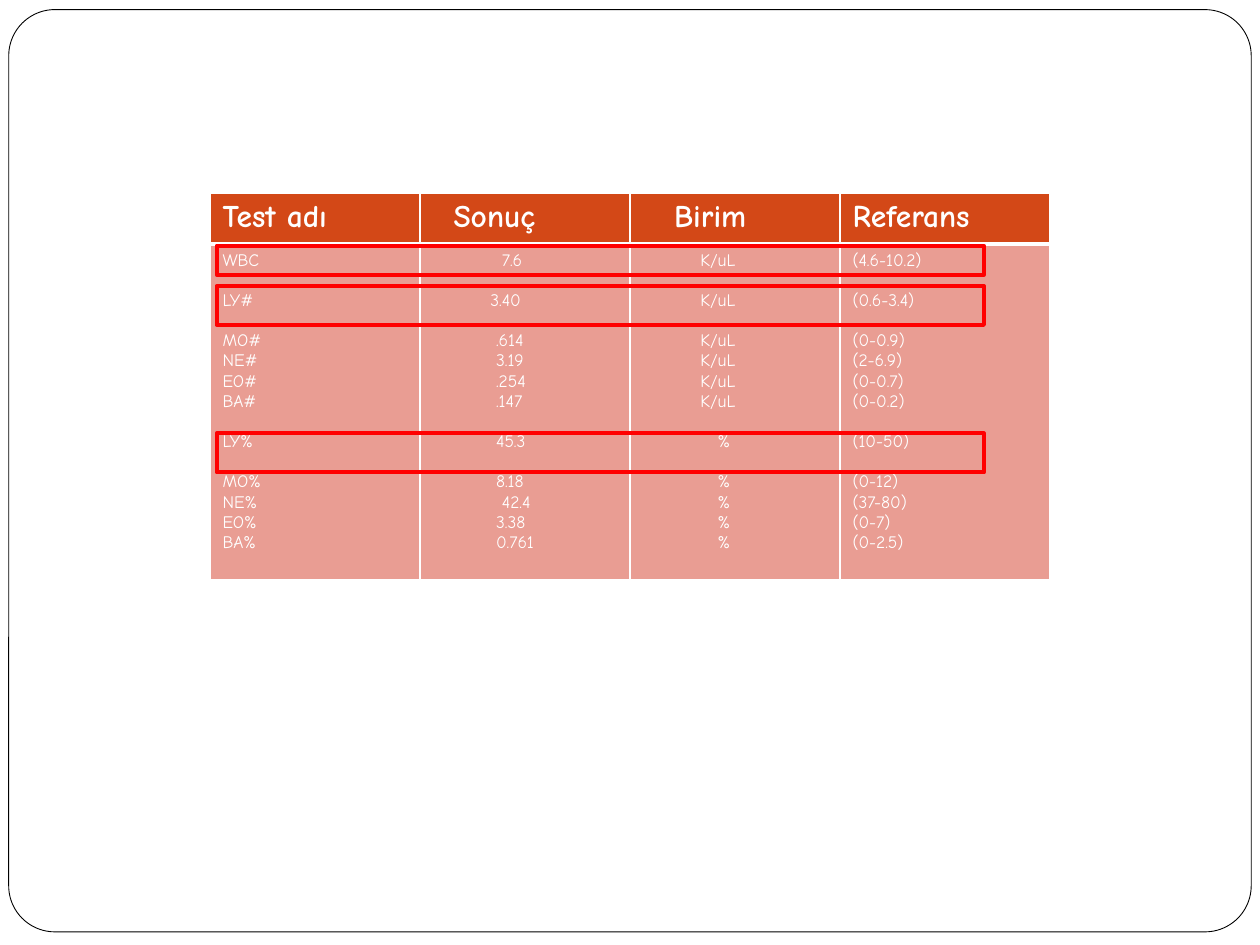
from lxml.etree import SubElement
from pptx import Presentation
from pptx.dml.color import RGBColor
from pptx.enum.shapes import MSO_SHAPE as Shape
from pptx.oxml.ns import qn
from pptx.util import Pt

FONT = "Comic Neue"
WHITE, BLACK, RED = "FFFFFF", "000000", "FF0000"
HEADER_FILL, BODY_FILL = "D34817", "E99D93"
HEADER_HEIGHT, BODY_HEIGHT = 29.2, 191.6
LINE_HEIGHT = 11.5
SPACE_WIDTH = 3.3

# Title, title indent
COLUMNS = [("Test adı", 0), ("Sonuç", 12), ("Birim", 18), ("Referans", 0)]
# Each group is set apart by one line: name, result, result indent in spaces, unit, reference
GROUPS = [
    [("WBC", "7.6", 12, "K/uL", "(4.6-10.2)")],
    [("LY#", "3.40", 10, "K/uL", "(0.6-3.4)")],
    [("MO#", ".614", 11, "K/uL", "(0-0.9)"),
     ("NE#", "3.19", 11, "K/uL", "(2-6.9)"),
     ("EO#", ".254", 11, "K/uL", "(0-0.7)"),
     ("BA#", ".147", 11, "K/uL", "(0-0.2)")],
    [("LY%", "45.3", 11, "%", "(10-50)")],
    [("MO%", "8.18", 11, "%", "(0-12)"),
     ("NE%", "42.4", 12, "%", "(37-80)"),
     ("EO%", "3.38", 11, "%", "(0-7)"),
     ("BA%", "0.761", 11, "%", "(0-2.5)")],
]
UNIT_INDENTS = {"K/uL": 10, "%": 13}
# Top and height of each highlight
HIGHLIGHTS = [(140.4, 16.6), (163.4, 22.3), (247.7, 22.3)]


def rgb(color):
    return RGBColor.from_string(color)


def add_outline(page, kind, box, color, weight, fill=None):
    shape = page.shapes.add_shape(kind, *map(Pt, box))
    shape.shadow.inherit = False
    if fill:
        shape.fill.solid()
        shape.fill.fore_color.rgb = rgb(fill)
    else:
        shape.fill.background()
    shape.line.color.rgb = rgb(color)
    shape.line.width = Pt(weight)
    return shape


def style_cell(cell, fill, top, bottom):
    """Give the cell its fill and white borders, with top and bottom weights in points."""
    properties = cell._tc.get_or_add_tcPr()
    for side, weight in (("L", 1), ("R", 1), ("T", top), ("B", bottom)):
        border = SubElement(properties, qn(f"a:ln{side}"), w=str(Pt(weight)))
        paint = SubElement(border, qn("a:solidFill"))
        SubElement(paint, qn("a:srgbClr"), val=WHITE)
    cell.fill.solid()
    cell.fill.fore_color.rgb = rgb(fill)


def write(para, text, size, bold, indent):
    para.text = text
    if indent:
        para._p.get_or_add_pPr().set("marL", str(Pt(indent)))
    font = para.runs[0].font
    font.name, font.size, font.bold = FONT, Pt(size), bold
    font.color.rgb = rgb(WHITE)


def column_groups(index):
    """Return the groups of one column as lists of (text, indent in spaces)."""
    def entry(name, result, result_indent, unit, reference):
        return [(name, 0), (result, result_indent),
                (unit, UNIT_INDENTS[unit]), (reference, 0)][index]
    return [[entry(*test) for test in group] for group in GROUPS]


def fill_body(cell, groups):
    frame = cell.text_frame
    for group_number, group in enumerate(groups):
        for position, (text, spaces) in enumerate(group):
            first = group_number == position == 0
            para = frame.paragraphs[0] if first else frame.add_paragraph()
            write(para, text, 10, False, spaces * SPACE_WIDTH)
            if position == 0 and not first:
                para.space_before = Pt(LINE_HEIGHT)


def add_results(page, left, top, width):
    height = HEADER_HEIGHT + BODY_HEIGHT
    box = map(Pt, (left, top, width, height))
    table = page.shapes.add_table(2, len(COLUMNS), *box).table
    table.horz_banding = False
    table.rows[0].height = Pt(HEADER_HEIGHT)
    table.rows[1].height = Pt(BODY_HEIGHT)
    for index, (title, indent) in enumerate(COLUMNS):
        table.columns[index].width = Pt(width / len(COLUMNS))
        header, body = table.cell(0, index), table.cell(1, index)
        style_cell(header, HEADER_FILL, top=1, bottom=3)
        write(header.text_frame.paragraphs[0], title, 18, True, indent)
        style_cell(body, BODY_FILL, top=3, bottom=1)
        fill_body(body, column_groups(index))


def add_highlights(page, left, width):
    for top, height in HIGHLIGHTS:
        add_outline(page, Shape.RECTANGLE, (left, top, width, height), RED, 2.25)


def main():
    deck = Presentation()
    deck.slide_width, deck.slide_height = Pt(720), Pt(540)
    page = deck.slides.add_slide(deck.slide_layouts[6])
    frame = add_outline(page, Shape.ROUNDED_RECTANGLE, (5, 5.5, 710, 527), BLACK, 0.5, WHITE)
    frame.adjustments[0] = 0.05
    add_results(page, 120, 110.2, 480)
    add_highlights(page, 123.8, 438.5)
    deck.save("out.pptx")


if __name__ == "__main__":
    main()
